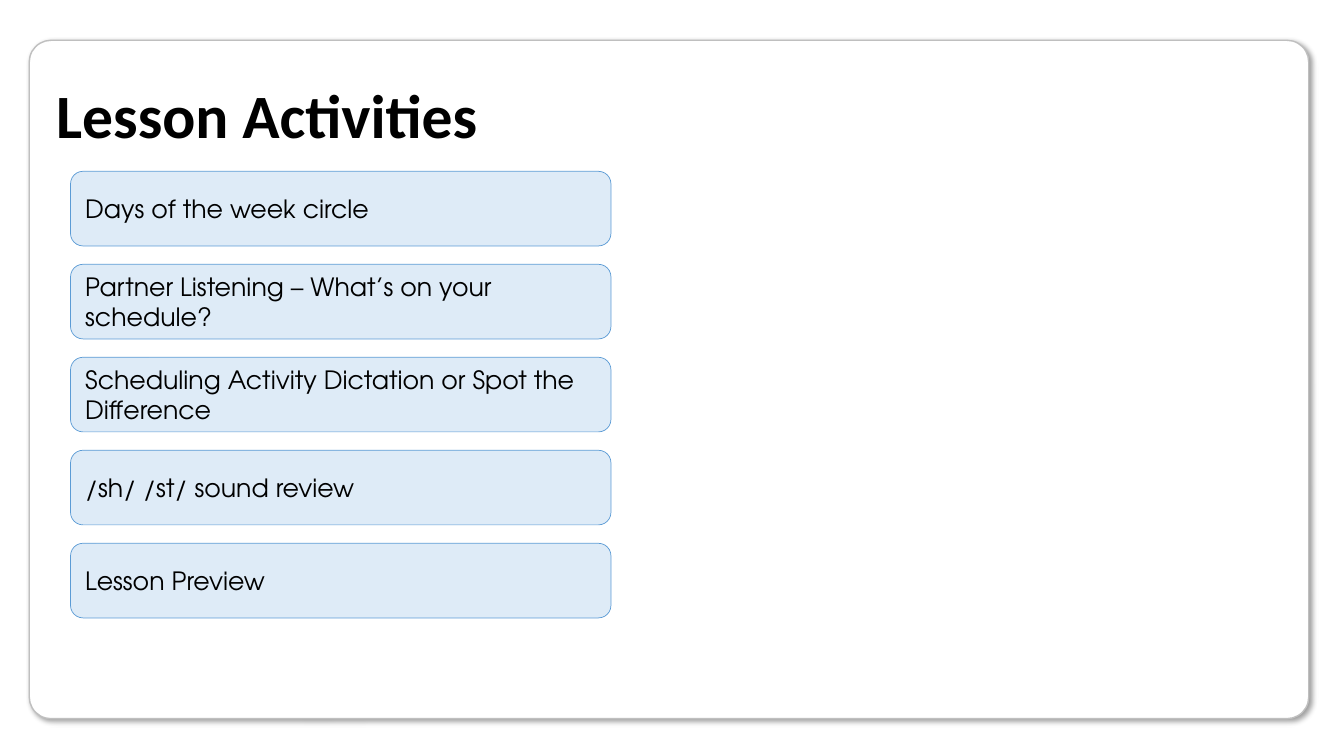
from lxml.etree import SubElement
from pptx import Presentation
from pptx.dml.color import RGBColor
from pptx.enum.shapes import MSO_SHAPE
from pptx.enum.text import MSO_ANCHOR, PP_ALIGN
from pptx.oxml.ns import qn
from pptx.util import Inches, Pt

# Content
TITLE = "Lesson Activities"
ACTIVITIES = [
    "Days of the week circle",
    "Partner Listening – What’s on your schedule?",
    "Scheduling Activity Dictation or Spot the Difference",
    "/sh/ /st/ sound review",
    "Lesson Preview",
]

# Layout in inches
ACTIVITY_LEFT, ACTIVITY_TOP = 0.7, 1.7
ACTIVITY_WIDTH, ACTIVITY_HEIGHT = 5.36, 0.74
ACTIVITY_STEP = 0.9225


def color(hex_value):
    return RGBColor.from_string(hex_value)


def add_rounded_box(slide, box, fill, line, line_width, corner):
    shape = slide.shapes.add_shape(
        MSO_SHAPE.ROUNDED_RECTANGLE, *(Inches(length) for length in box))
    shape.adjustments[0] = corner
    shape.shadow.inherit = False
    shape.fill.solid()
    shape.fill.fore_color.rgb = color(fill)
    shape.line.color.rgb = color(line)
    shape.line.width = Pt(line_width)
    return shape


def add_shadow(shape):
    effects = shape._element.spPr.find(qn("a:effectLst"))
    shadow = SubElement(effects, qn("a:outerShdw"), blurRad=str(Pt(4)),
                        dist=str(Pt(3)), dir=str(45 * 60000),
                        algn="tl", rotWithShape="0")
    shade = SubElement(shadow, qn("a:srgbClr"), val="000000")
    SubElement(shade, qn("a:alpha"), val="40000")


def write_text(shape, text, font_name, size, side_inset, bold=False):
    frame = shape.text_frame
    frame.word_wrap = True
    frame.vertical_anchor = MSO_ANCHOR.MIDDLE
    frame.margin_left = frame.margin_right = Inches(side_inset)
    frame.margin_top = frame.margin_bottom = Inches(0.05)
    paragraph = frame.paragraphs[0]
    paragraph.alignment = PP_ALIGN.LEFT
    run = paragraph.add_run()
    run.text = text
    run.font.name = font_name
    run.font.size = Pt(size)
    run.font.bold = bold
    run.font.color.rgb = color("000000")
    return paragraph


def main():
    presentation = Presentation()
    presentation.slide_width = Inches(13.33)
    presentation.slide_height = Inches(7.5)
    slide = presentation.slides.add_slide(presentation.slide_layouts[6])

    # Card behind the content
    card = add_rounded_box(slide, (0.29, 0.4, 12.69, 6.73),
                           "FFFFFF", "BFBFBF", 1, 0.032)
    add_shadow(card)

    # Title
    title = slide.shapes.add_textbox(
        Inches(0.46), Inches(0.4), Inches(12.37), Inches(1.55))
    paragraph = write_text(title, TITLE, "Calibri", 44, 0.1, bold=True)
    paragraph.line_spacing = 0.9

    # Activity list
    for index, activity in enumerate(ACTIVITIES):
        top = ACTIVITY_TOP + index * ACTIVITY_STEP
        box = (ACTIVITY_LEFT, top, ACTIVITY_WIDTH, ACTIVITY_HEIGHT)
        shape = add_rounded_box(slide, box, "DEEBF7", "5B9BD5", 0.5, 0.167)
        write_text(shape, activity, "TeX Gyre Adventor", 18, 0.11)

    presentation.save("out.pptx")


if __name__ == "__main__":
    main()
